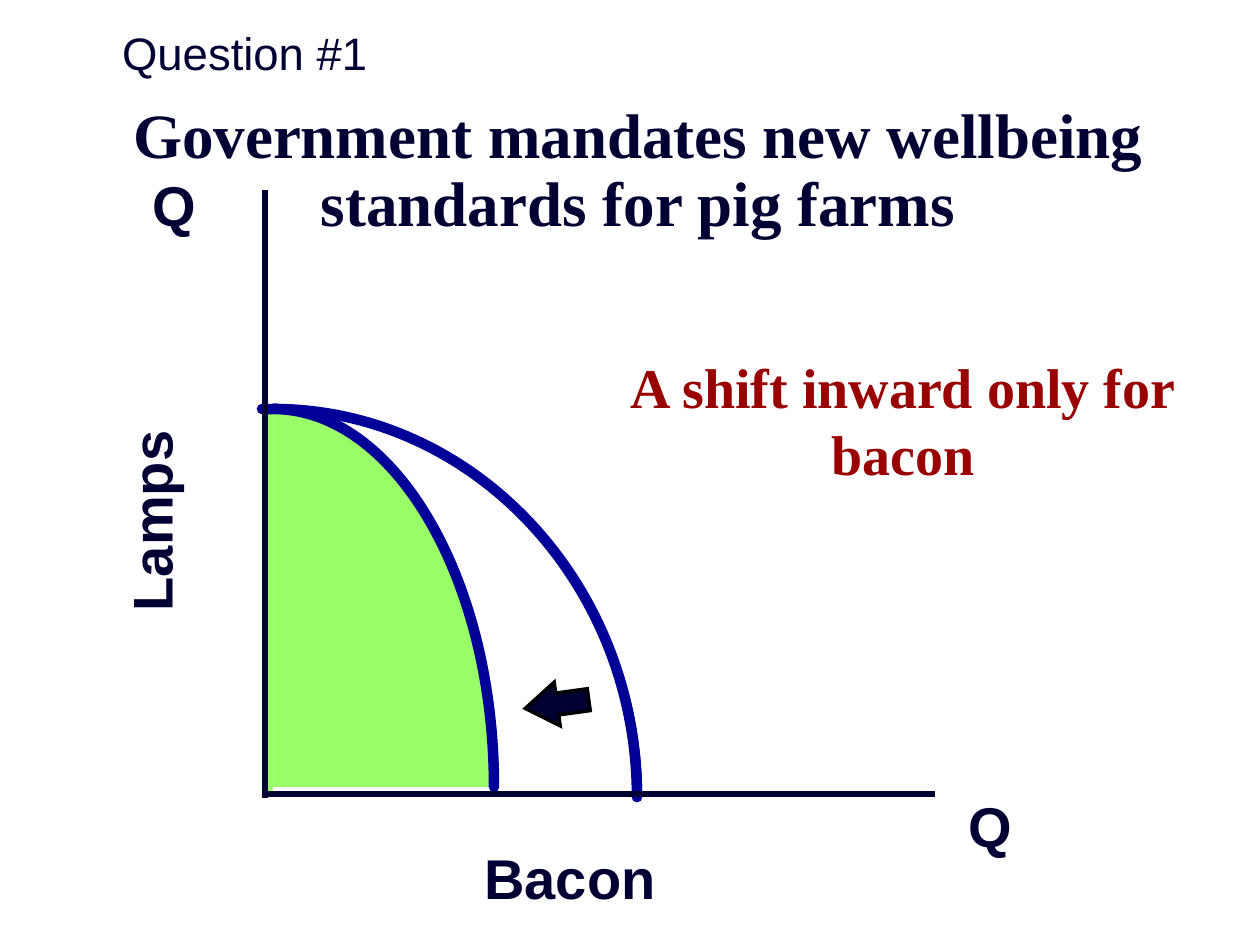
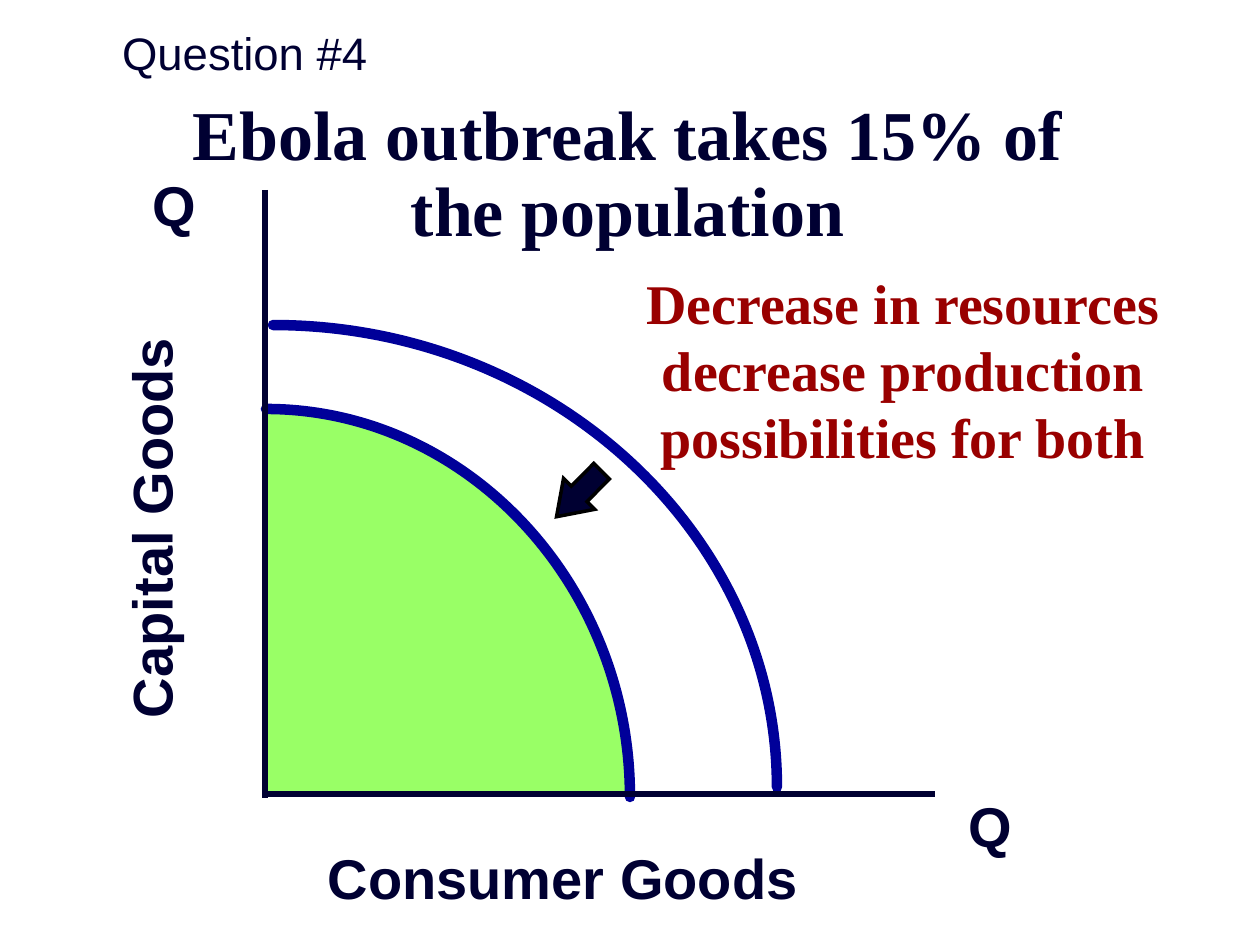
from copy import deepcopy
from dataclasses import dataclass

from pptx import Presentation
from pptx.dml.color import RGBColor
from pptx.enum.shapes import MSO_CONNECTOR, MSO_SHAPE
from pptx.enum.text import MSO_ANCHOR, MSO_AUTO_SIZE, PP_ALIGN
from pptx.oxml.ns import qn
from pptx.oxml.xmlchemy import OxmlElement
from pptx.util import Pt

LEFT, CENTER = PP_ALIGN.LEFT, PP_ALIGN.CENTER
TOP = MSO_ANCHOR.TOP
NO_FIT = MSO_AUTO_SIZE.NONE
STRAIGHT = MSO_CONNECTOR.STRAIGHT
RIGHT_ARROW = MSO_SHAPE.RIGHT_ARROW
TITLE_ONLY = 5
PX = 914400 / 126
ROUNDNESS = 0.55  # Bezier handle length of a quarter ellipse


@dataclass(frozen=True)
class Theme:
    ink: str = "000032"
    answer: str = "990000"
    curve: str = "000099"
    area: str = "99FF66"
    blank: str = "FFFFFF"
    outline: str = "000000"
    serif: str = "Times New Roman"
    sans: str = "Arial"
    question_size: int = 26
    label_size: int = 32
    curve_width: int = 6
    axis_width: int = 4
    arrow_width: int = 2


THEME = Theme()

# Boxes are (left, top, width, height); label spans are (centre, length).
SLIDES = [
    {
        "question": "Question #1",
        "title": ("Government mandates new wellbeing standards for pig farms",
                  36, (95, 98, 1086, 150)),
        "y_label": ("Lamps", 521, 207),
        "x_label": ("Bacon", 570, 213),
        "curves": [(THEME.area, (262, 409, 375, 388)),
                   (THEME.blank, (273, 409, 364, 388)),
                   (THEME.area, (273, 409, 221, 378))],
        "arrow": ((525, 682, 64, 44), 172.2),
        "answer": ("A shift inward only for bacon", (599, 346, 608, 149)),
    },
    {
        "question": "Question #4",
        "title": ("Ebola outbreak takes 15% of the population",
                  40, (126, 94, 1003, 165)),
        "y_label": ("Capital Goods", 528, 423),
        "x_label": ("Consumer Goods", 563, 549),
        "curves": [(THEME.blank, (273, 325, 504, 462)),
                   (THEME.area, (266, 409, 364, 388))],
        "arrow": ((547, 472, 64, 44), 134.7),
        "answer": ("Decrease in resources decrease production "
                   "possibilities for both", (599, 262, 608, 214)),
    },
]

QUESTION_BOX = (0, 19, 490, 68)
AXES = [(265, 190, 265, 798), (263, 794, 935, 794)]
AXIS_ENDS = [("Q", (140, 164, 68, 79)), ("Q", (956, 785, 68, 79))]
Y_LABEL_X, X_LABEL_Y, LABEL_HEIGHT = 151, 878, 81


def emu(lengths):
    return [round(n * PX) for n in lengths]


def rgb(color):
    return RGBColor.from_string(color)


def set_line(sp, color, width):
    sp.line.color.rgb = rgb(color)
    sp.line.width = Pt(width)


def set_fill(sp, color):
    sp.shadow.inherit = False
    sp.fill.solid()
    sp.fill.fore_color.rgb = rgb(color)


def set_text(sp, text, size, color, font, bold=True, align=CENTER, wrap=True):
    tf = sp.text_frame
    tf.auto_size = NO_FIT
    tf.word_wrap = wrap
    tf.vertical_anchor = TOP
    p = tf.paragraphs[0]
    p.text = text
    p.alignment = align
    p.font.size = Pt(size)
    p.font.bold = bold
    p.font.name = font
    p.font.color.rgb = rgb(color)
    return p


def add_title(slide, text, size, box):
    sp = slide.shapes.title
    sp.left, sp.top, sp.width, sp.height = emu(box)
    p = set_text(sp, text, size, THEME.ink, THEME.serif)
    p.line_spacing = 0.9


def add_label(slide, text, box, align=CENTER, rotation=0):
    sp = slide.shapes.add_textbox(*emu(box))
    sp.rotation = rotation
    set_text(sp, text, THEME.label_size, THEME.ink, THEME.sans,
             align=align, wrap=False)


def bend(line_to, points):
    """Replace a straight path segment by a Bezier curve through the handles."""
    curve = OxmlElement("a:cubicBezTo")
    for x, y in points:
        pt = OxmlElement("a:pt")
        pt.set("x", str(round(x)))
        pt.set("y", str(round(y)))
        curve.append(pt)
    line_to.getparent().replace(line_to, curve)


def add_curve(slide, fill, box):
    """Draw a quarter ellipse: filled down to its centre, stroked on the arc only."""
    x, y, w, h = emu(box)
    builder = slide.shapes.build_freeform(x, y)
    builder.add_line_segments([(x + w, y + h), (x, y + h)], close=True)
    sp = builder.convert_to_shape()
    set_fill(sp, fill)
    set_line(sp, THEME.curve, THEME.curve_width)
    sp.element.spPr.find(qn("a:ln")).set("cap", "rnd")

    area = next(sp.element.iter(qn("a:path")))
    bend(area[1], [(w * ROUNDNESS, 0), (w, h * (1 - ROUNDNESS)), (w, h)])
    arc = deepcopy(area)
    for closing_part in arc[2:]:
        arc.remove(closing_part)
    arc.set("fill", "none")
    area.set("stroke", "0")
    area.addprevious(arc)


def add_axis(slide, ends):
    sp = slide.shapes.add_connector(STRAIGHT, *emu(ends))
    set_line(sp, THEME.ink, THEME.axis_width)
    sp.element.spPr.append(OxmlElement("a:effectLst"))


def add_shift_arrow(slide, box, rotation):
    sp = slide.shapes.add_shape(RIGHT_ARROW, *emu(box))
    sp.rotation = rotation
    sp.adjustments[0], sp.adjustments[1] = 0.5, 0.73
    set_fill(sp, THEME.ink)
    set_line(sp, THEME.outline, THEME.arrow_width)
    miter = OxmlElement("a:miter")
    miter.set("lim", "800000")
    sp.element.spPr.find(qn("a:ln")).append(miter)


def add_axis_labels(slide, y_label, x_label):
    for text, box in AXIS_ENDS:
        add_label(slide, text, box, LEFT)
    for (text, centre, length), upright in ((y_label, True), (x_label, False)):
        cx, cy = (Y_LABEL_X, centre) if upright else (centre, X_LABEL_Y)
        box = (cx - length / 2, cy - LABEL_HEIGHT / 2, length, LABEL_HEIGHT)
        add_label(slide, text, box, rotation=270 if upright else 0)


def add_question_slide(prs, content):
    slide = prs.slides.add_slide(prs.slide_layouts[TITLE_ONLY])
    add_title(slide, *content["title"])
    for fill, box in content["curves"]:
        add_curve(slide, fill, box)
    for ends in AXES:
        add_axis(slide, ends)
    add_axis_labels(slide, content["y_label"], content["x_label"])
    add_shift_arrow(slide, *content["arrow"])

    text, box = content["answer"]
    set_text(slide.shapes.add_textbox(*emu(box)), text,
             THEME.label_size, THEME.answer, THEME.serif)
    set_text(slide.shapes.add_textbox(*emu(QUESTION_BOX)), content["question"],
             THEME.question_size, THEME.ink, THEME.sans, bold=False)


def main():
    prs = Presentation()
    prs.slide_width, prs.slide_height = emu((1260, 945))
    for content in SLIDES:
        add_question_slide(prs, content)
    prs.save("out.pptx")


if __name__ == "__main__":
    main()
